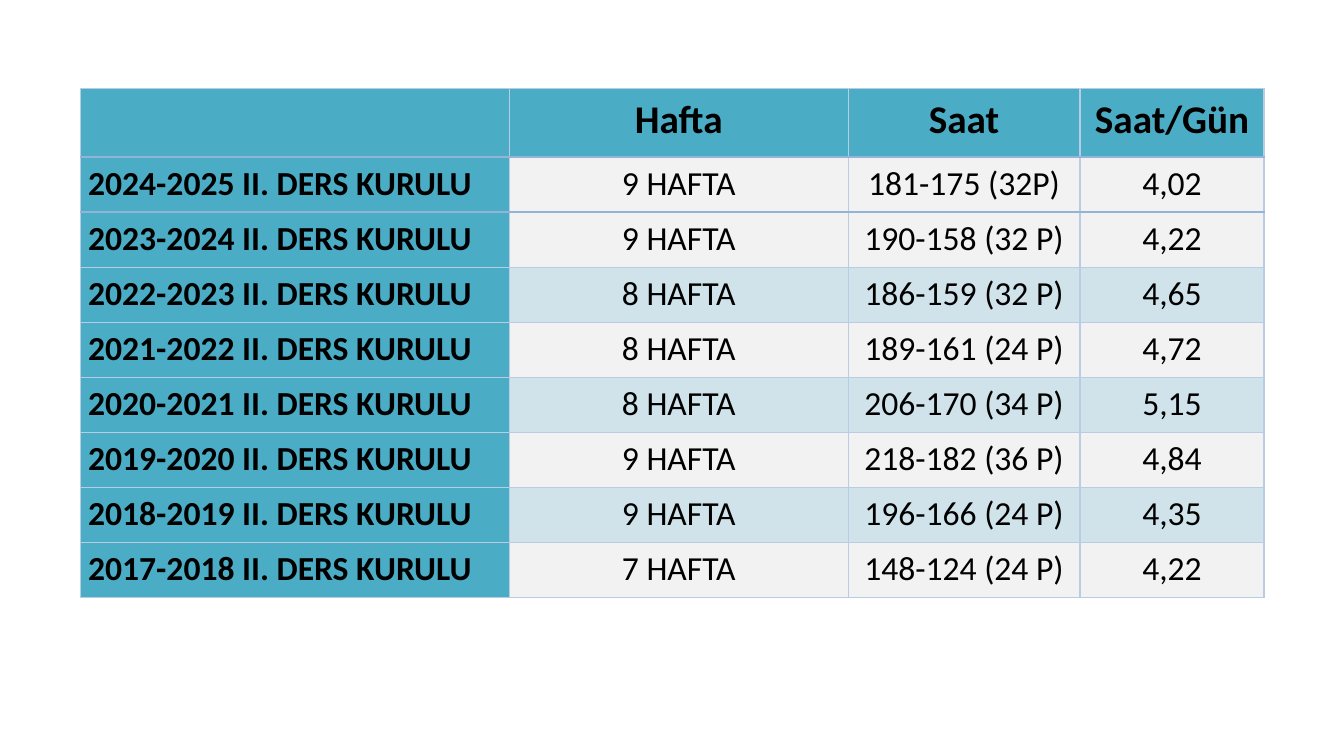
from dataclasses import dataclass

from lxml.etree import SubElement
from pptx import Presentation
from pptx.dml.color import RGBColor
from pptx.enum.text import MSO_ANCHOR, PP_ALIGN
from pptx.oxml.ns import qn
from pptx.util import Pt


@dataclass(frozen=True)
class Theme:
    font: str = "Calibri"
    header_size: float = 28
    body_size: float = 24
    text: str = "000000"
    accent: str = "4BACC6"
    plain_band: str = "F2F2F2"
    tinted_band: str = "D0E3EA"
    thin_line: tuple = ("B8CCE4", 1)
    strong_line: tuple = ("95B3D7", 1.5)


THEME = Theme()

# Table content and grid, in points
HEADERS = ("", "Hafta", "Saat", "Saat/Gün")
COURSES = (
    ("2024-2025", 9, "181-175 (32P)", "4,02"),
    ("2023-2024", 9, "190-158 (32 P)", "4,22"),
    ("2022-2023", 8, "186-159 (32 P)", "4,65"),
    ("2021-2022", 8, "189-161 (24 P)", "4,72"),
    ("2020-2021", 8, "206-170 (34 P)", "5,15"),
    ("2019-2020", 9, "218-182 (36 P)", "4,84"),
    ("2018-2019", 9, "196-166 (24 P)", "4,35"),
    ("2017-2018", 7, "148-124 (24 P)", "4,22"),
)
TABLE_LEFT, TABLE_TOP = 57.6, 63.4
COLUMN_WIDTHS = (306.2, 242, 165.7, 131.4)
ROW_HEIGHTS = (48.8,) + (39.35,) * len(COURSES)
STRONG_RULES = (1, 2)  # rules counted from the top edge of the table
CELL_FORMAT = {
    "margin_left": Pt(5.4),
    "margin_right": Pt(5.4),
    "margin_top": Pt(0),
    "margin_bottom": Pt(0),
    "vertical_anchor": MSO_ANCHOR.TOP,
}


def apply_format(target, values):
    for name, value in values.items():
        setattr(target, name, value)


def set_borders(cell, row):
    """Draw the four sides; must run before the cell gets its fill."""
    properties = cell._tc.get_or_add_tcPr()
    rules = {"lnL": None, "lnR": None, "lnT": row, "lnB": row + 1}
    for side, rule in rules.items():
        color, width = THEME.strong_line if rule in STRONG_RULES else THEME.thin_line
        line = SubElement(properties, qn(f"a:{side}"), w=str(Pt(width)))
        fill = SubElement(line, qn("a:solidFill"))
        SubElement(fill, qn("a:srgbClr"), val=color)


def cell_color(row, column):
    if row == 0 or column == 0:
        return THEME.accent
    return THEME.tinted_band if row > 2 and row % 2 else THEME.plain_band


def write_text(cell, text, row, column):
    paragraph = cell.text_frame.paragraphs[0]
    is_label = row > 0 and column == 0
    apply_format(paragraph, {
        "alignment": PP_ALIGN.JUSTIFY if is_label else PP_ALIGN.CENTER,
        "line_spacing": 1.15,
    })
    run = paragraph.add_run()
    run.text = text
    apply_format(run.font, {
        "name": THEME.font,
        "size": Pt(THEME.body_size if row else THEME.header_size),
        "bold": row == 0 or column == 0,
    })
    run.font.color.rgb = RGBColor.from_string(THEME.text)


def format_cell(cell, text, row, column):
    apply_format(cell, CELL_FORMAT)
    set_borders(cell, row)
    cell.fill.solid()
    cell.fill.fore_color.rgb = RGBColor.from_string(cell_color(row, column))
    if text:
        write_text(cell, text, row, column)


def add_course_table(slide):
    rows = [HEADERS] + [
        (f"{year} II. DERS KURULU", f"{weeks} HAFTA", hours, daily)
        for year, weeks, hours, daily in COURSES
    ]
    table = slide.shapes.add_table(
        len(rows), len(HEADERS), Pt(TABLE_LEFT), Pt(TABLE_TOP),
        Pt(sum(COLUMN_WIDTHS)), Pt(sum(ROW_HEIGHTS)),
    ).table
    for column, width in zip(table.columns, COLUMN_WIDTHS):
        column.width = Pt(width)
    for row, height in zip(table.rows, ROW_HEIGHTS):
        row.height = Pt(height)
    for row, texts in enumerate(rows):
        for column, text in enumerate(texts):
            format_cell(table.cell(row, column), text, row, column)


def main():
    # Widescreen slide on the blank layout
    presentation = Presentation()
    apply_format(presentation, {"slide_width": Pt(960), "slide_height": Pt(540)})
    slide = presentation.slides.add_slide(presentation.slide_layouts[6])

    # Weeks and hours per school year
    add_course_table(slide)
    presentation.save("out.pptx")


if __name__ == "__main__":
    main()
